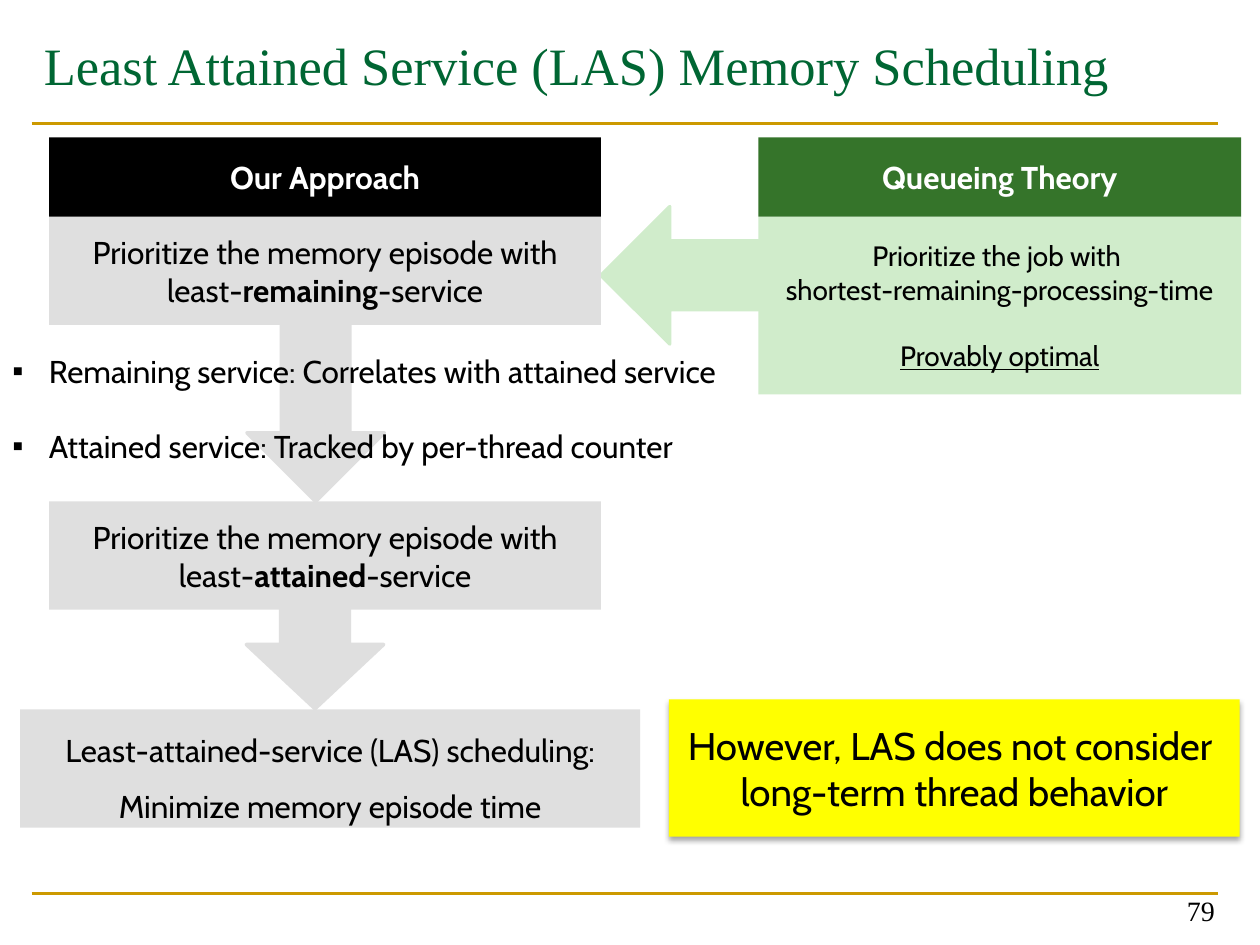
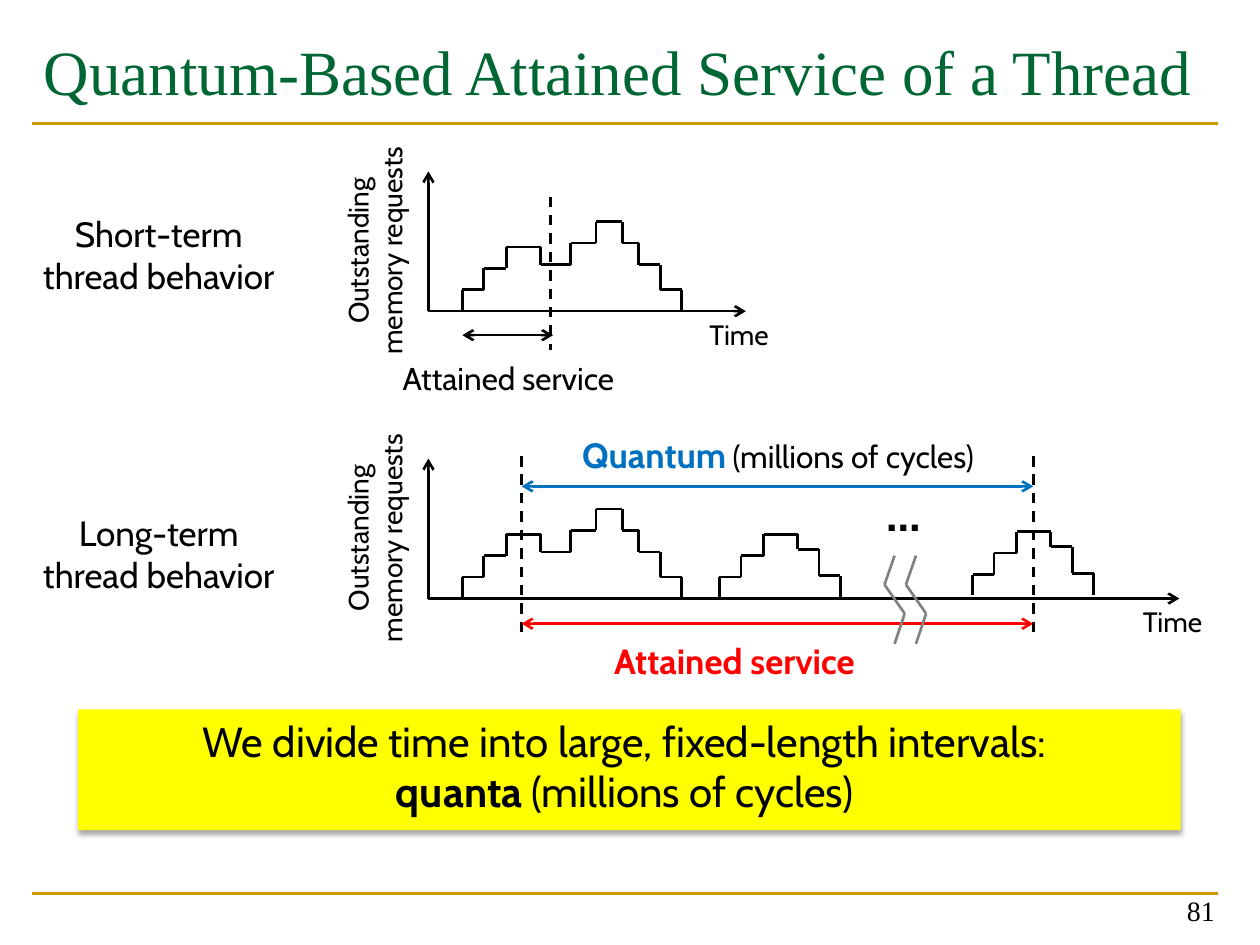
from pptx import Presentation, util as u
from pptx.dml.color import RGBColor
from pptx.enum import dml, shapes, text
from lxml import etree
from dataclasses import dataclass
from itertools import pairwise

PX = 9144  # one px is 1/100 inch
A = "http://schemas.openxmlformats.org/drawingml/2006/main"


@dataclass(frozen=True)
class Theme:
    sans: str = "Cabin"
    serif: str = "Times New Roman"
    black: str = "000000"
    white: str = "FFFFFF"
    title: str = "006633"
    rule: str = "CC9900"
    gray: str = "DFDFDF"
    dark_green: str = "35742A"
    light_green: str = "D0ECCB"
    yellow: str = "FFFF00"
    blue: str = "0070C0"
    red: str = "FF0000"
    mid_gray: str = "808080"
    small: int = 16
    body: int = 18
    label: int = 20
    note: int = 22
    large_note: int = 24
    ellipsis: int = 28
    line: float = 1.5


T = Theme()
BOLD = {"bold": True}

# ---- Content: slide 1 ----
LAS_TITLE = ("Least Attained Service (LAS) Memory Scheduling", 30, 79)


def episode(kind):
    return [[("Prioritize the memory episode with least-", {}), (kind, BOLD), ("-service", {})]]


# box, fill, text colour, size, paragraphs, paragraph format
LAS_BOXES = [
    ((602, 172, 383, 141), T.light_green, T.black, T.small,
     ["Prioritize the job with ", "shortest-remaining-processing-time",
      [("Provably optimal", {"underline": True})]], {"last_gap": 19}),
    ((39, 172, 438, 86), T.gray, T.black, T.body, episode("remaining"), {}),
    ((39, 109, 438, 63), T.black, T.white, T.body, [[("Our Approach", BOLD)]], {}),
    ((602, 109, 383, 63), T.dark_green, T.white, T.body, [[("Queueing Theory", BOLD)]], {}),
    ((16, 563, 492, 94), T.gray, T.black, T.body,
     ["Least-attained-service (LAS) scheduling: Minimize memory episode time"],
     {"line_spacing": 1.5}),
    ((39, 398, 438, 86), T.gray, T.black, T.body, episode("attained"), {}),
]
LAS_ARROWS = [  # box before rotation, rotation, colour
    ((199, 457, 102, 109), 90, T.gray),
    ((180, 273, 141, 109), 90, T.gray),
    ((477, 164, 125, 109), 180, T.light_green),
]
LAS_BULLETS = ["Remaining service: Correlates with attained service",
               "Attained service: Tracked by per-thread counter"]
LAS_NOTE = ["However, LAS does not consider ", "long-term thread behavior"]

# ---- Content: slide 2 ----
QUANTUM_TITLE = ("Quantum-Based Attained Service of a Thread", 36, 81)
BEHAVIORS = [  # label, label top, time axis y, time axis end
    ("Short-term\nthread behavior", 164, 247, 592),
    ("Long-term\nthread behavior", 401, 475, 936),
]
AXIS_X = 340
REQUESTS = "Outstanding memory requests"
# step edges and the height of each step
TWIN_PEAK = ([367, 384, 402, 429, 453, 473, 494, 507, 524, 541],
             [17, 34, 51, 37, 54, 71, 54, 37, 17])
SINGLE_PEAK = ([0, 17, 35, 62, 79, 96], [16, 33, 50, 38, 17])
SINGLE_PEAKS = [(571, 474), (772, 472)]  # left, base
QUANTUM = (414, 820)
ZIGZAG = [(8, 441), (0, 464), (16, 487), (8, 511)]
ZIGZAG_LEFTS = (702, 719)
QUANTUM_LABEL = [[("Quantum", {"bold": True, "color": T.blue, "size": T.label}),
                  (" ", {"size": T.small}), ("(millions of cycles)", {})]]
QUANTA_NOTE = ["We divide time into large, fixed-length intervals: ",
               [("quanta ", BOLD), ("(millions of cycles) ", {})]]


# ---- Drawing helpers ----
def rgb(value):
    return RGBColor.from_string(value)


def sub(parent, tag, **attrs):
    return etree.SubElement(parent, f"{{{A}}}{tag}", attrs)


def set_all(obj, values):
    for name, value in values.items():
        setattr(obj, name, value)


def write(sp, paras, size, color=T.black, font=T.sans, align="CENTER", anchor="MIDDLE",
          last_gap=0, line_spacing=None, inset_top=5):
    tf = sp.text_frame
    set_all(tf, {"word_wrap": True, "vertical_anchor": getattr(text.MSO_ANCHOR, anchor),
                 "margin_left": 10 * PX, "margin_right": 10 * PX,
                 "margin_top": inset_top * PX, "margin_bottom": 5 * PX})
    for i, runs in enumerate(paras):
        p = tf.paragraphs[0] if i == 0 else tf.add_paragraph()
        p.alignment = getattr(text.PP_ALIGN, align)
        if line_spacing:
            p.line_spacing = line_spacing
        if last_gap and i == len(paras) - 1:
            p.space_before = u.Pt(last_gap)
        for words, changes in ([(runs, {})] if isinstance(runs, str) else runs):
            fmt = {"name": font, "size": size, "color": color, "bold": False} | changes
            fmt["size"] = u.Pt(fmt["size"])
            shade = rgb(fmt.pop("color"))
            for n, part in enumerate(words.split("\n")):
                if n:
                    p.add_line_break()
                r = p.add_run()
                r.text = part
                set_all(r.font, fmt)
                r.font.color.rgb = shade
    return tf


def label(s, box, paras, size, rotation=0, **fmt):
    sp = s.shapes.add_textbox(*(v * PX for v in box))
    sp.rotation = rotation
    return write(sp, paras, size, **({"anchor": "TOP"} | fmt))


def block(s, box, fill, kind="RECTANGLE", rotation=0, outline=False):
    sp = s.shapes.add_shape(getattr(shapes.MSO_SHAPE, kind), *(v * PX for v in box))
    sp.shadow.inherit = False
    sp.rotation = rotation
    sp.fill.solid()
    sp.fill.fore_color.rgb = rgb(fill)
    if outline:
        sp.line.color.rgb = rgb(fill)
        sp.line.width = u.Pt(2)
    else:
        sp.line.fill.background()
    return sp


def note(s, box, paras, size, **fmt):
    sp = block(s, box, T.yellow)
    effects = sp._element.spPr.find(f"{{{A}}}effectLst")
    shadow = sub(effects, "outerShdw", blurRad="39400", dist="22900", dir="5400000",
                 rotWithShape="0")
    sub(sub(shadow, "srgbClr", val=T.black), "alpha", val="35000")
    write(sp, paras, size, **fmt)


def line(s, start, end, color=T.black, dash=False, heads=()):
    cn = s.shapes.add_connector(shapes.MSO_CONNECTOR.STRAIGHT,
                                *(v * PX for v in (*start, *end)))
    cn.line.color.rgb = rgb(color)
    cn.line.width = u.Pt(T.line)
    if dash:
        cn.line.dash_style = dml.MSO_LINE.DASH
    ln = cn.line._get_or_add_ln()
    for head in heads:
        sub(ln, head, type="arrow")
    sub(cn._element.spPr, "effectLst")


def polyline(s, points, color=T.black):
    for start, end in pairwise(points):
        line(s, start, end, color)


def stairs(s, profile, base, left=0):
    edges, heights = profile
    levels = [base - h for h in (0, *heights, 0)]
    polyline(s, [(left + x, y) for x, pair in zip(edges, pairwise(levels)) for y in pair])


def new_slide(prs, title, size, number):
    s = prs.slides.add_slide(prs.slide_layouts[6])
    s.background.fill.solid()
    s.background.fill.fore_color.rgb = rgb(T.white)
    for y in (709, 98):
        line(s, (25, y), (967, y), T.rule)
    label(s, (25, 17, 942, 117), [title], size, color=T.title, font=T.serif,
          align="LEFT", inset_top=9)
    label(s, (741, 691, 233, 50), [str(number)], T.small, font=T.serif,
          align="RIGHT", anchor="BOTTOM")
    return s


# ---- Slides ----
def las_slide(prs):
    s = new_slide(prs, *LAS_TITLE)
    for box, rotation, color in LAS_ARROWS:
        block(s, box, color, "RIGHT_ARROW", rotation, outline=True)
    for box, fill, color, size, paras, fmt in LAS_BOXES:
        write(block(s, box, fill), paras, size, color, **fmt)
    # bulleted remarks over the first arrow
    tf = label(s, (0, 273, 633, 102), LAS_BULLETS, T.body, align="LEFT",
               anchor="MIDDLE", last_gap=21)
    for p in tf.paragraphs:
        pPr = p._p.get_or_add_pPr()
        pPr.set("marL", str(29 * PX))
        pPr.set("indent", str(-29 * PX))
        sub(pPr, "buFont", typeface="Arial")
        sub(pPr, "buChar", char="▪")
    note(s, (531, 555, 453, 109), LAS_NOTE, T.note)


def quantum_slide(prs):
    s = new_slide(prs, *QUANTUM_TITLE)
    both = ("headEnd", "tailEnd")
    # axes and the thread's first episode, once per time scale
    for name, top, base, end in BEHAVIORS:
        label(s, (17, top, 218, 77), [name], T.label)
        label(s, (192, base - 80, 211, 64), [REQUESTS], T.small, rotation=270)
        line(s, (AXIS_X, base), (AXIS_X, base - 111), heads=["tailEnd"])
        line(s, (AXIS_X, base), (end, base), heads=["tailEnd"])
        label(s, (end - 43, base, 75, 16), ["Time"], T.small)
        stairs(s, TWIN_PEAK, base)
    # short term: service attained so far
    line(s, (437, 156), (437, 278), dash=True)
    line(s, (367, 266), (439, 266), heads=both)
    label(s, (291, 280, 225, 40), ["Attained service"], T.body)
    # long term: later episodes, break in the axis, one quantum
    for left, base in SINGLE_PEAKS:
        stairs(s, SINGLE_PEAK, base, left)
    label(s, (680, 378, 75, 57), [[("…", BOLD)]], T.ellipsis)
    for x in QUANTUM:
        line(s, (x, 362), (x, 503), dash=True)
    for y, color in ((386, T.blue), (495, T.red)):
        line(s, (QUANTUM[0], y), (QUANTUM[1], y), color, heads=both)
    for left in ZIGZAG_LEFTS:
        polyline(s, [(left + x, y) for x, y in ZIGZAG], T.mid_gray)
    label(s, (422, 339, 391, 44), QUANTUM_LABEL, T.body)
    label(s, (455, 503, 256, 44), [[("Attained service", BOLD)]], T.label, color=T.red)
    note(s, (62, 563, 875, 96), QUANTA_NOTE, T.large_note, anchor="TOP")


def main():
    prs = Presentation()
    prs.slide_width, prs.slide_height = 1000 * PX, 750 * PX
    las_slide(prs)
    quantum_slide(prs)
    prs.save("out.pptx")


if __name__ == "__main__":
    main()
